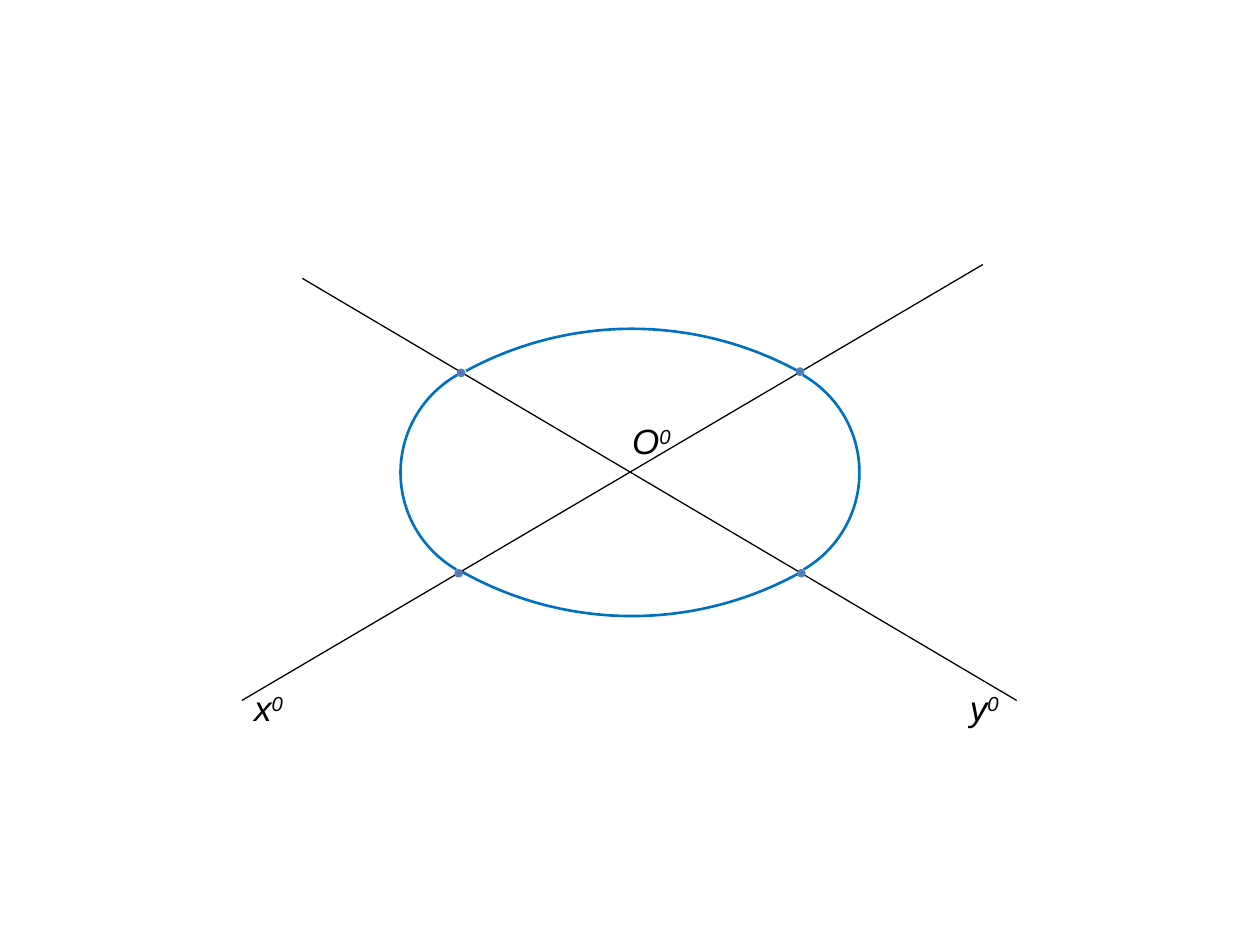
from pptx import Presentation
from pptx.dml.color import RGBColor
from pptx.enum.shapes import MSO_CONNECTOR, MSO_SHAPE
from pptx.enum.text import MSO_AUTO_SIZE
from pptx.oxml.ns import qn
from pptx.util import Pt
from lxml.etree import SubElement

COLORS = {"axis": "000000", "oval": "0070C0", "dot": "FF0000", "dot_line": "4F81BD"}
SLIDE_SIZE = (720, 540)

# All places are points measured from the centre of the oval.
AXES = [(-221.8, 130.3, 201.6, -118.8), (-187.2, -110.9, 221, 130.3)]
DOTS = [(-96.5, -56.9), (-97.9, 57.6), (97.9, 57.6), (97.2, -57.6)]
LABELS = [("x", -221.8, 118.8), ("y", 187.2, 118.8), ("О", -5.8, -33.8)]
LONG_ANGLES = (241.46, 299.41)
SHORT_ANGLES = (299.68, 59.73)
# centre x, centre y, radius, angles, flips
ARCS = [
    (1.1, 116.3, 198.4, LONG_ANGLES, ()),
    (1.1, -116.3, 198.4, LONG_ANGLES, ("flipH", "flipV")),
    (67, 0, 64.1, SHORT_ANGLES, ()),
    (-67, 0, 64.1, SHORT_ANGLES, ("flipH",)),
]


def rgb(name):
    return RGBColor.from_string(COLORS[name])


def add_round(slide, kind, x, y, radius, line, width):
    """Add a circular shape around the centre x, y."""
    shape = slide.shapes.add_shape(
        kind, Pt(x - radius), Pt(y - radius), Pt(2 * radius), Pt(2 * radius))
    shape.shadow.inherit = False
    shape.line.color.rgb = rgb(line)
    shape.line.width = Pt(width)
    return shape


def add_arc(slide, x, y, radius, angles, flips):
    arc = add_round(slide, MSO_SHAPE.ARC, x, y, radius, "oval", 1.5)
    arc.fill.background()
    for index, degrees in enumerate(angles):
        arc.adjustments[index] = degrees * 0.6  # 60000 units a degree, over 100000
    for flip in flips:
        arc._element.spPr.get_or_add_xfrm().set(flip, "1")


def add_dot(slide, x, y):
    dot = add_round(slide, MSO_SHAPE.OVAL, x, y, 1.44, "dot_line", 2)
    dot.fill.solid()
    dot.fill.fore_color.rgb = rgb("dot")


def add_axis(slide, x1, y1, x2, y2):
    axis = slide.shapes.add_connector(
        MSO_CONNECTOR.STRAIGHT, Pt(x1), Pt(y1), Pt(x2), Pt(y2))
    axis.line.color.rgb = rgb("axis")
    axis.line.width = Pt(0.75)
    SubElement(axis._element.spPr, qn("a:effectLst"))


def add_text(slide, text, x, y, *, superscript="", size=20, color="axis",
             font="Arial", italic=True, width=45.4, height=31.7):
    box = slide.shapes.add_textbox(Pt(x), Pt(y), Pt(width), Pt(height))
    frame = box.text_frame
    frame.word_wrap = True
    frame.auto_size = MSO_AUTO_SIZE.SHAPE_TO_FIT_TEXT
    paragraph = frame.paragraphs[0]
    for part, baseline in ((text, 0), (superscript, 30000)):
        if not part:
            continue
        run = paragraph.add_run()
        run.text = part
        run.font.size = Pt(size)
        run.font.name = font
        run.font.italic = italic
        run.font.color.rgb = rgb(color)
        if baseline:
            run._r.get_or_add_rPr().set("baseline", str(baseline))


def draw_oval_figure(slide, left, top, width, height):
    """Draw the four-centre oval with its axes, centred in the box."""
    cx, cy = left + width / 2, top + height / 2
    long_arcs, short_arcs = ARCS[:2], ARCS[2:]
    for x, y, *rest in long_arcs:
        add_arc(slide, cx + x, cy + y, *rest)
    for x1, y1, x2, y2 in AXES:
        add_axis(slide, cx + x1, cy + y1, cx + x2, cy + y2)
    for text, x, y in LABELS:
        add_text(slide, text, cx + x, cy + y, superscript="0")
    for x, y in DOTS:
        add_dot(slide, cx + x, cy + y)
    for x, y, *rest in short_arcs:
        add_arc(slide, cx + x, cy + y, *rest)


def main():
    presentation = Presentation()
    presentation.slide_width, presentation.slide_height = map(Pt, SLIDE_SIZE)
    slide = presentation.slides.add_slide(presentation.slide_layouts[6])
    draw_oval_figure(slide, 0, 0, *SLIDE_SIZE)
    presentation.save("out.pptx")


if __name__ == "__main__":
    main()
